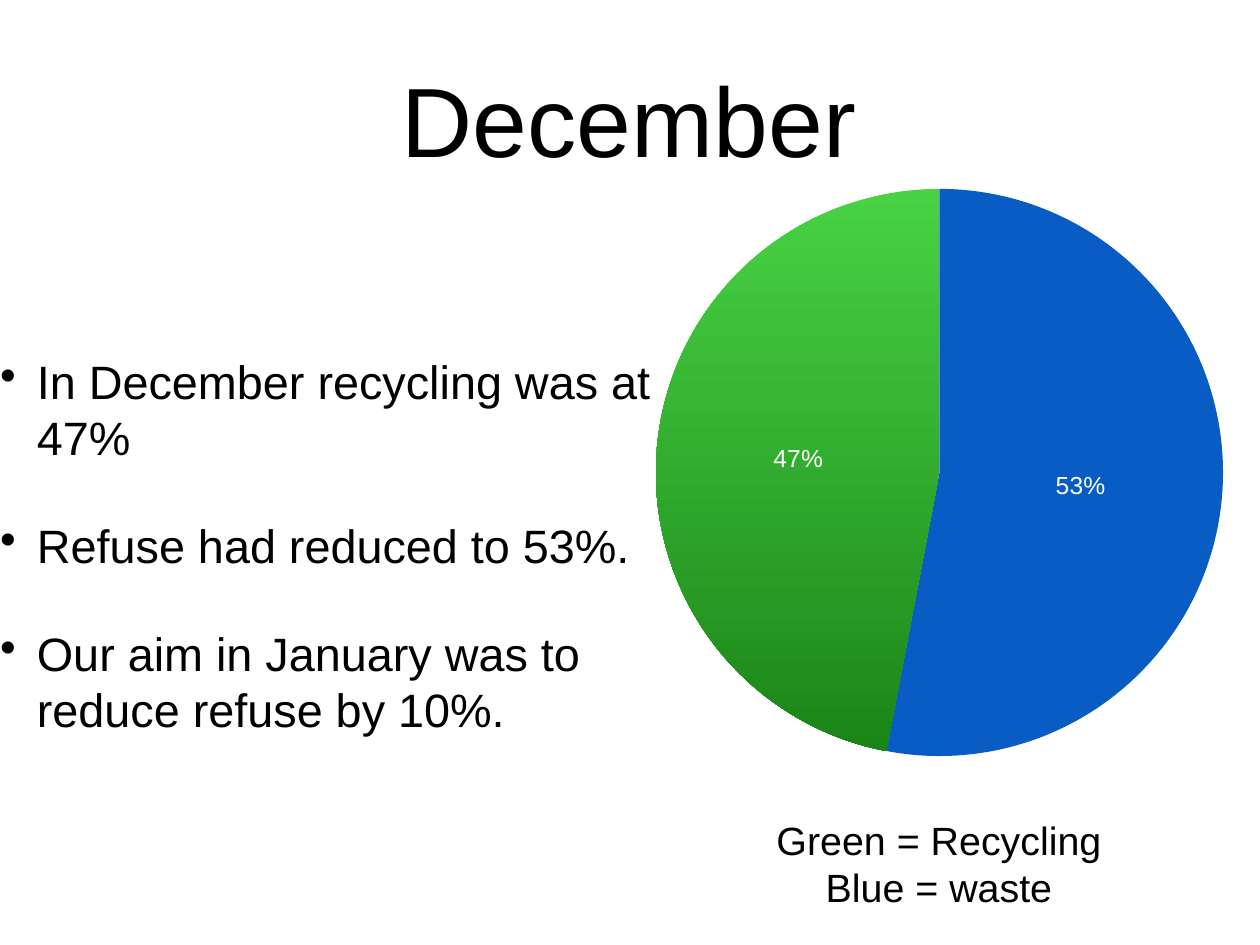
from lxml import etree
from pptx import Presentation
from pptx.chart.data import CategoryChartData
from pptx.dml.color import RGBColor
from pptx.enum.chart import XL_CHART_TYPE, XL_LABEL_POSITION
from pptx.enum.text import MSO_ANCHOR, PP_ALIGN
from pptx.oxml import parse_xml
from pptx.oxml.ns import nsdecls, qn
from pptx.util import Pt

FONT = "Arial"
COLORS = {"text": "000000", "label": "FFFFFF", "waste": "095CC4",
          "green top": "48D244", "green base": "1B8518"}


def style(font, size, color):
    font.name, font.size = FONT, Pt(size)
    font.color.rgb = RGBColor.from_string(COLORS[color])


def write(shape, box, lines, size, anchor, align, gap=0):
    shape.left, shape.top, shape.width, shape.height = map(Pt, box)
    frame = shape.text_frame
    frame.word_wrap = True
    frame.vertical_anchor = anchor
    frame.margin_left = frame.margin_right = Pt(0)
    frame.margin_top = frame.margin_bottom = Pt(0)
    for i, line in enumerate(lines):
        para = frame.add_paragraph() if i else frame.paragraphs[0]
        para.alignment, para.space_before = align, Pt(gap)
        run = para.add_run()
        run.text = line
        style(run.font, size, "text")
    return frame


deck = Presentation()
deck.slide_width, deck.slide_height = Pt(1024), Pt(768)
slide = deck.slides.add_slide(deck.slide_layouts[5])
shapes = slide.shapes

# Title
write(shapes.title, (99.5, 0, 823.5, 192), ["December"], 80,
      MSO_ANCHOR.MIDDLE, PP_ALIGN.CENTER)

# Pie chart
data = CategoryChartData()
data.categories = ["1", "2"]
data.add_series("Region 1", (53, 47))
chart = shapes.add_chart(XL_CHART_TYPE.PIE, Pt(533), Pt(153.5),
                         Pt(461), Pt(461), data).chart
chart.has_title = chart.has_legend = False
style(chart.font, 10, "text")
plot = chart.plots[0]
plot.vary_by_categories = False

# Slices: solid waste, shaded recycling
waste, green = [plot.series[0].points[i].format for i in range(2)]
waste.fill.solid()
waste.fill.fore_color.rgb = RGBColor.from_string(COLORS["waste"])
green.fill.gradient()
green.fill.gradient_angle = 270
for stop, name in zip(green.fill.gradient_stops, ("green top", "green base")):
    stop.color.rgb = RGBColor.from_string(COLORS[name])
for part in (waste, green):
    part.line.fill.background()

# Percent labels
plot.has_data_labels = True
labels = plot.data_labels
labels.show_percentage, labels.show_value = True, False
labels.number_format, labels.number_format_is_linked = "0%", False
labels.position = XL_LABEL_POSITION.CENTER
style(labels.font, 20, "label")

# The pie fills its frame
area = chart.element.find(".//" + qn("c:plotArea"))
for old in area.findall(qn("c:layout")):
    area.remove(old)
area.insert(0, parse_xml(
    f'<c:layout {nsdecls("c")}><c:manualLayout><c:layoutTarget val="inner"/>'
    '<c:xMode val="edge"/><c:yMode val="edge"/><c:x val="0"/><c:y val="0"/>'
    '<c:w val="1"/><c:h val="1"/></c:manualLayout></c:layout>'))

# Bullets
points = ["In December recycling was at 47%", "Refuse had reduced to 53%.",
          "Our aim in January was to reduce refuse by 10%."]
frame = write(shapes.add_textbox(0, 0, 0, 0), (0, 159, 541, 568), points, 38,
              MSO_ANCHOR.MIDDLE, PP_ALIGN.LEFT, 42)
for para in frame.paragraphs:
    props = para._p.get_or_add_pPr()
    props.set("marL", str(Pt(30)))
    props.set("indent", str(-Pt(30)))
    etree.SubElement(props, qn("a:buChar")).set("char", "•")

# Colour key
write(shapes.add_textbox(0, 0, 0, 0), (554.5, 663, 417.5, 89),
      ["Green = Recycling", "Blue = waste"], 32,
      MSO_ANCHOR.TOP, PP_ALIGN.CENTER)

deck.save("out.pptx")
